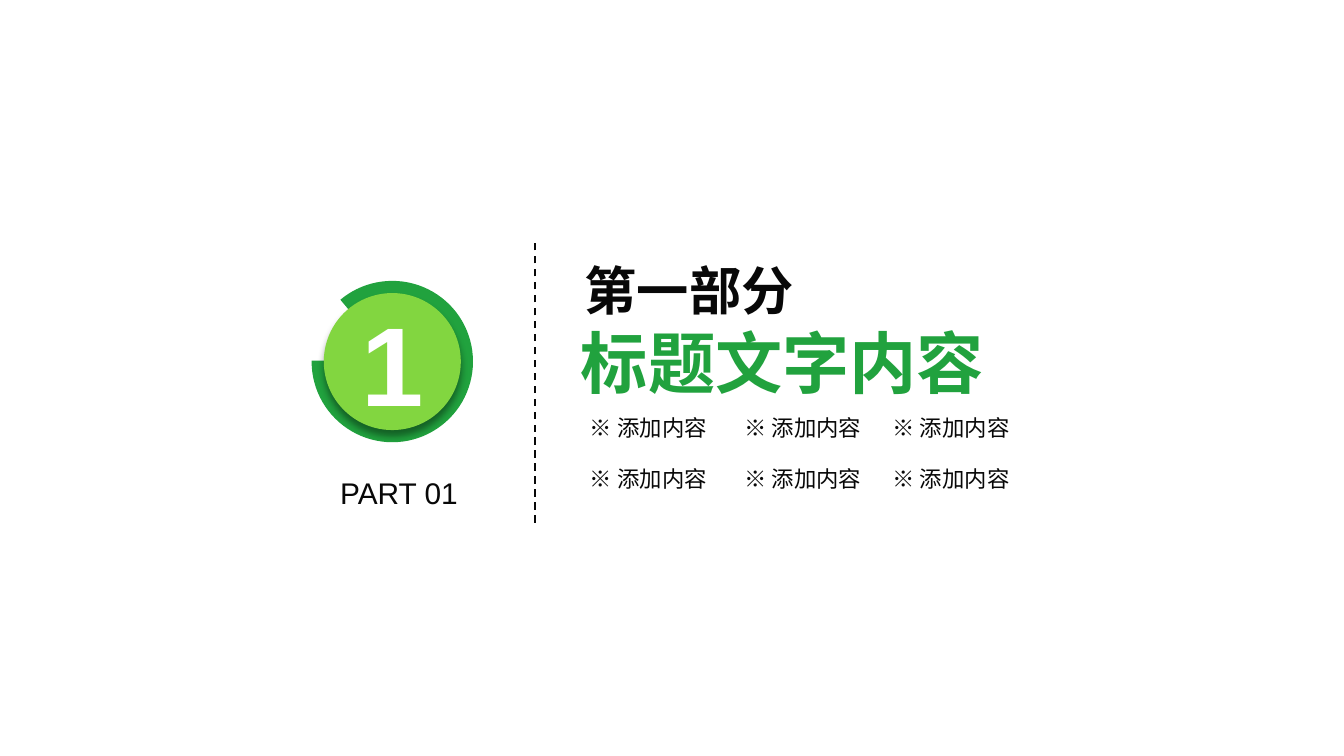
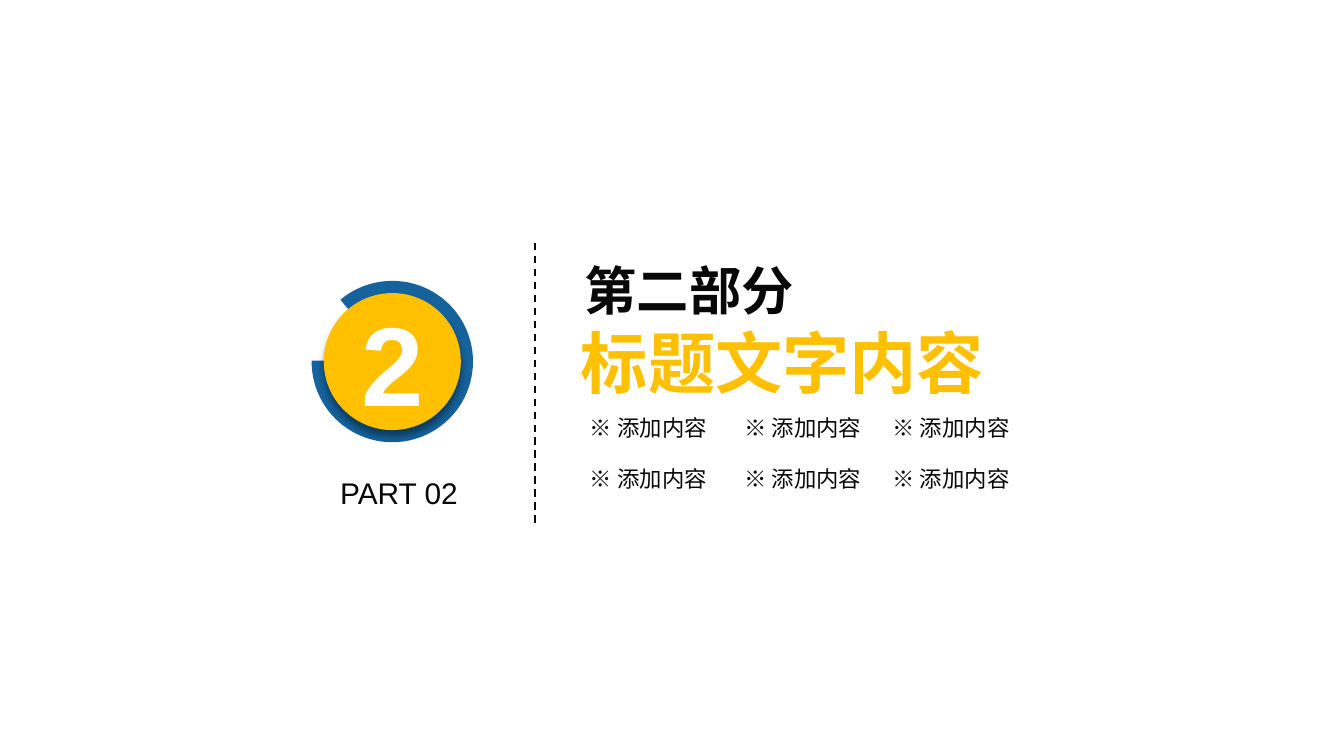
import pptx
import pptx.util
import pptx.dml.color
import pptx.enum.dml
import pptx.enum.shapes
import pptx.enum.text
import pptx.oxml
import pptx.oxml.ns
from lxml import etree

Cm, Pt = pptx.util.Cm, pptx.util.Pt
RGB = pptx.dml.color.RGBColor
Align = pptx.enum.text.PP_ALIGN
Anchor = pptx.enum.text.MSO_ANCHOR
Shape = pptx.enum.shapes.MSO_SHAPE

INK = RGB(0x08, 0x08, 0x08)
WHITE = RGB(0xFF, 0xFF, 0xFF)
GREEN = RGB(0x21, 0xA2, 0x3E)
LIME = RGB(0x82, 0xD6, 0x40)
BLUE = RGB(0x15, 0x62, 0x9C)
GOLD = RGB(0xFF, 0xC0, 0x00)
FONT = "Arial"

# number, part name, ring, disc, heading colour
PARTS = [
    (1, "第一部分", GREEN, LIME, GREEN),
    (2, "第二部分", BLUE, GOLD, GOLD),
]
HEADING = "标题文字内容"
ITEM = "※ 添加内容"

# left, top, width, height in cm
BADGE = (5.89, 5.31, 3.05, 3.05)
LABEL = (6.43, 8.97, 2.51, 0.69)
RULE = (10.11, 4.55, 0, 5.33)
TITLE = (10.69, 4.75, 8.2, 3)
ITEMS = (10.97, 7.75, 8.56, 1.65)


def place(box):
    return [Cm(v) for v in box]


def add_run(para, text, size, color, bold=False):
    run = para.add_run()
    run.text = text
    font = run.font
    font.name, font.size, font.bold = FONT, Pt(size), bold
    font.color.rgb = color


def set_frame(frame, side, edge, wrap=True):
    """Set the insets in cm and let the box grow with its text."""
    frame.margin_left = frame.margin_right = Cm(side)
    frame.margin_top = frame.margin_bottom = Cm(edge)
    frame.word_wrap = wrap
    frame.auto_size = pptx.enum.text.MSO_AUTO_SIZE.SHAPE_TO_FIT_TEXT
    frame.vertical_anchor = Anchor.TOP


def add_text(slide, box, text, size, side=0, edge=0):
    frame = slide.shapes.add_textbox(*place(box)).text_frame
    set_frame(frame, side, edge)
    add_run(frame.paragraphs[0], text, size, INK)


def add_title(slide, box, name, color):
    title = slide.shapes.title
    title.left, title.top, title.width, title.height = place(box)
    frame = title.text_frame
    set_frame(frame, 0.25, 0.13, wrap=False)
    first = frame.paragraphs[0]
    first.alignment = Align.LEFT
    add_run(first, " ", 14, INK, True)
    add_run(first, name, 28, INK, True)
    second = frame.add_paragraph()
    second.alignment = Align.CENTER
    add_run(second, HEADING, 36, color, True)


def add_rule(slide, box):
    x, y, w, h = box
    rule = slide.shapes.add_connector(
        pptx.enum.shapes.MSO_CONNECTOR.STRAIGHT, *place((x, y + h, x + w, y)))
    rule.line.color.rgb = INK
    rule.line.width = Pt(1)
    rule.line.dash_style = pptx.enum.dml.MSO_LINE.DASH
    etree.SubElement(rule._element.spPr, pptx.oxml.ns.qn("a:effectLst"))


def add_items(slide, box):
    x, y, w, h = box
    cell = 0.69
    for top in (y, y + h - cell):
        for shift in (0, 2.92, 5.72):
            add_text(slide, (x + shift, top, w - 5.72, cell),
                     ITEM, 12, 0.18, 0.08)


def add_form(group, kind, box, color):
    form = group.shapes.add_shape(kind, *place(box))
    form.shadow.inherit = False
    form.fill.solid()
    form.fill.fore_color.rgb = color
    form.line.fill.background()
    return form


def drop_shadow(form):
    """Cast a soft shadow straight down."""
    effects = form._element.spPr.find(pptx.oxml.ns.qn("a:effectLst"))
    effects.append(pptx.oxml.parse_xml(
        f'<a:outerShdw {pptx.oxml.ns.nsdecls("a")} blurRad="{Pt(4)}" '
        f'dist="{Pt(3)}" dir="5400000" algn="t" rotWithShape="0">'
        '<a:srgbClr val="000000"><a:alpha val="40000"/></a:srgbClr>'
        '</a:outerShdw>'))


def add_badge(slide, box, number, ring, disc):
    x, y, w, h = box
    rim = 0.23
    group = slide.shapes.add_group_shape()
    arc = add_form(group, Shape.BLOCK_ARC, box, ring)
    for i, value in enumerate((137.98, 108.39, 0.23)):
        arc.adjustments[i] = value
    inner = (x + rim, y + rim, w - 2 * rim, h - 2 * rim)
    dot = add_form(group, Shape.OVAL, inner, disc)
    drop_shadow(dot)
    dot.text_frame.vertical_anchor = Anchor.MIDDLE
    para = dot.text_frame.paragraphs[0]
    para.alignment = Align.CENTER
    add_run(para, str(number), 60, WHITE, True)


def add_part(deck, number, name, ring, disc, accent):
    slide = deck.slides.add_slide(deck.slide_layouts[5])
    add_title(slide, TITLE, name, accent)
    add_rule(slide, RULE)
    add_text(slide, LABEL, f"PART {number:02}", 16)
    add_items(slide, ITEMS)
    add_badge(slide, BADGE, number, ring, disc)


def main():
    deck = pptx.Presentation()
    deck.slide_width, deck.slide_height = Cm(25.4), Cm(14.29)
    for part in PARTS:
        add_part(deck, *part)
    deck.save("out.pptx")


if __name__ == "__main__":
    main()
